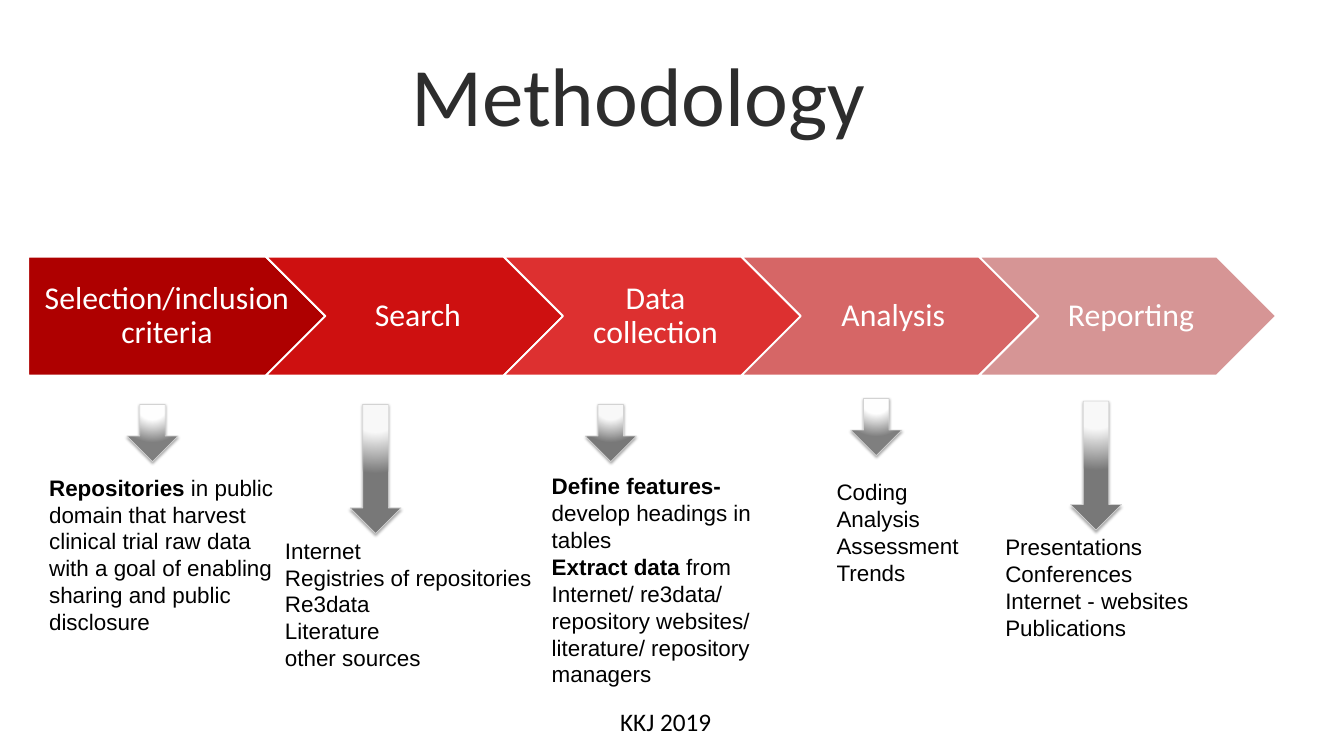
from lxml.etree import SubElement
from pptx import Presentation
from pptx.dml.color import RGBColor
from pptx.enum.shapes import MSO_SHAPE
from pptx.enum.text import MSO_ANCHOR, PP_ALIGN
from pptx.oxml import parse_xml
from pptx.oxml.ns import nsdecls, qn
from pptx.util import Pt


def color(value):
    return RGBColor.from_string(value)


def style(frame, font, size, ink, align, anchor, insets):
    frame.word_wrap = True
    frame.vertical_anchor = anchor
    frame.margin_left, frame.margin_top, frame.margin_right, frame.margin_bottom = map(Pt, insets)
    for para in frame.paragraphs:
        para.alignment = align
        for span in para.runs:
            span.font.name = font
            span.font.size = Pt(size)
            span.font.color.rgb = color(ink)


deck = Presentation()
deck.slide_width, deck.slide_height = Pt(1440), Pt(810)
page = deck.slides.add_slide(deck.slide_layouts[6])

steps = [
    ("Selection/inclusion criteria", "AE0000"),
    ("Search", "CE1010"),
    ("Data collection", "DD3030"),
    ("Analysis", "D66666"),
    ("Reporting", "D69595"),
]
for index, (label, fill) in enumerate(steps):
    kind = MSO_SHAPE.CHEVRON if index else MSO_SHAPE.PENTAGON
    step = page.shapes.add_shape(kind, Pt(30.2 + 254.7 * index), Pt(275), Pt(318.4), Pt(127.4))
    step.shadow.inherit = False
    step.fill.solid()
    step.fill.fore_color.rgb = color(fill)
    step.line.color.rgb = color("FFFFFF")
    step.line.width = Pt(2)
    step.text_frame.text = label
    step.text_frame.paragraphs[0].line_spacing = 0.9
    insets = (10.8 if index else 14.4, 7.2, 3.6, 7.2)
    style(step.text_frame, "Calibri", 34, "FFFFFF", PP_ALIGN.CENTER, MSO_ANCHOR.MIDDLE, insets)

headings = [
    ("Methodology", 0, 32.4, 1368, 135.4, 89, "2D2D2D"),
    ("KKJ 2019", 485.3, 751, 455.8, 43.2, 27, "000000"),
]
for label, left, top, width, height, size, ink in headings:
    box = page.shapes.add_textbox(Pt(left), Pt(top), Pt(width), Pt(height))
    box.text_frame.text = label
    style(box.text_frame, "Calibri", size, ink, PP_ALIGN.CENTER, MSO_ANCHOR.MIDDLE, (14.4, 7.2, 14.4, 7.2))

light = ("FFFFFF", "FEFEFE", "7F7F7F")
dark = ("FAFAFA", "F8F8F8", "787878")
arrows = [
    (136.1, 433.4, 61.2, light),
    (375.1, 433.4, 138.2, dark),
    (627.1, 433.4, 61.2, dark),
    (911.5, 427, 61.2, light),
    (1147, 429.8, 138.2, dark),
]
for left, top, height, stops in arrows:
    arrow = page.shapes.add_shape(MSO_SHAPE.DOWN_ARROW, Pt(left), Pt(top), Pt(54.7), Pt(height))
    arrow.shadow.inherit = False
    arrow.line.color.rgb = color("D3D3D3")
    arrow.line.width = Pt(0.75)
    marks = "".join(
        f'<a:gs pos="{position}"><a:srgbClr val="{stop}"/></a:gs>'
        for position, stop in zip((0, 40000, 100000), stops)
    )
    gradient = parse_xml(
        f'<a:gradFill {nsdecls("a")} rotWithShape="1"><a:gsLst>{marks}</a:gsLst><a:path path="circle">'
        '<a:fillToRect l="50000" t="-80000" r="50000" b="180000"/></a:path></a:gradFill>'
    )
    properties = arrow.element.spPr
    properties.find(qn("a:prstGeom")).addnext(gradient)
    shadow = SubElement(
        properties.find(qn("a:effectLst")), qn("a:outerShdw"),
        blurRad=str(Pt(3.1)), dist=str(Pt(1.8)), dir="5400000", rotWithShape="0",
    )
    SubElement(SubElement(shadow, qn("a:srgbClr"), val="000000"), qn("a:alpha"), val="35000")

notes = [
    (41.8, 502.6, 262.1, 207.4, 10.8, 5, [
        [("Repositories", True), (" in public domain that harvest clinical trial raw data "
                                  "with a goal of enabling sharing and public disclosure", False)],
    ]),
    (294.5, 570.2, 393.1, 156.2, 10.8, 5, [
        [(line, False)]
        for line in ("Internet", "Registries of repositories", "Re3data", "Literature", "other sources")
    ]),
    (580.3, 501.1, 271.4, 243.4, 10.8, 5, [
        [("Define features-", True)],
        [("develop headings in tables", False)],
        [("Extract data ", True), ("from Internet/ re3data/ repository websites/ "
                                   "literature/ repository managers", False)],
    ]),
    (889.2, 509, 146.9, 123.8, 7.2, 3.6, [
        [(line, False)] for line in ("Coding", "Analysis", "Assessment", "Trends")
    ]),
    (1066.3, 566.6, 393.1, 127.4, 10.8, 5, [
        [(line, False)] for line in ("Presentations", "Conferences", "Internet - websites", "Publications")
    ]),
]
for left, top, width, height, side, edge, lines in notes:
    box = page.shapes.add_textbox(Pt(left), Pt(top), Pt(width), Pt(height))
    frame = box.text_frame
    frame.text = "\n".join("" for line in lines)
    for para, line in zip(frame.paragraphs, lines):
        for words, bold in line:
            span = para.add_run()
            span.text = words
            span.font.bold = bold
    style(frame, "Arial", 24, "000000", PP_ALIGN.LEFT, MSO_ANCHOR.TOP, (side, edge, side, edge))

deck.save("out.pptx")
